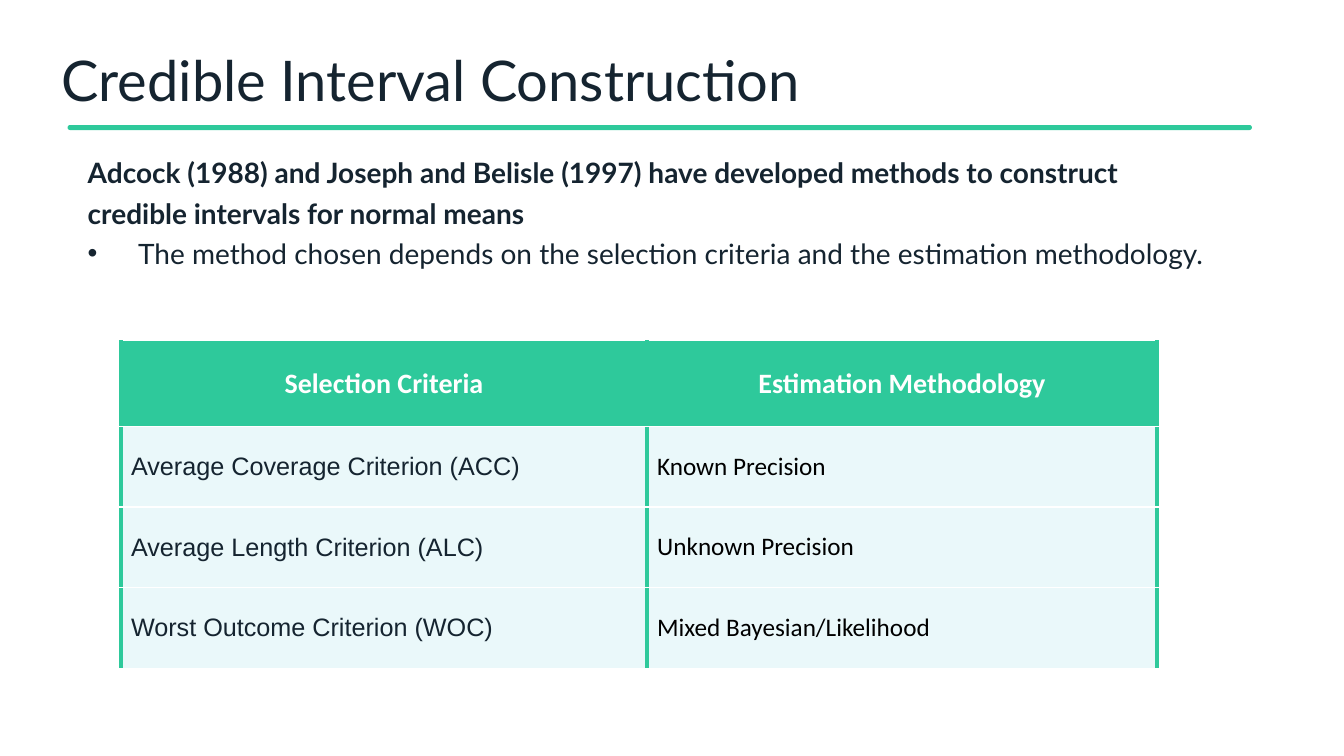
from dataclasses import dataclass

from lxml.etree import SubElement
from pptx import Presentation
from pptx.dml.color import RGBColor
from pptx.enum.shapes import MSO_SHAPE as Preset
from pptx.enum.text import MSO_ANCHOR as Anchor, PP_ALIGN as Align
from pptx.oxml import parse_xml
from pptx.oxml.ns import nsdecls, qn
from pptx.util import Pt

NAVY = RGBColor(0x15, 0x24, 0x30)
GREEN = RGBColor(0x2E, 0xC9, 0x9B)
PALE = RGBColor(0xD6, 0xF2, 0xF6)
WHITE = RGBColor(0xFF, 0xFF, 0xFF)
BLACK = RGBColor(0x00, 0x00, 0x00)


@dataclass(frozen=True)
class TextStyle:
    font: str
    size: float
    color: RGBColor
    bold: bool = False


@dataclass(frozen=True)
class CellStyle:
    text: TextStyle
    fill: RGBColor
    align: Align = Align.LEFT
    opacity: int = 100


TITLE = TextStyle("Lato", 40, NAVY)
LEAD = TextStyle("Lato", 20, NAVY, bold=True)
BULLET = TextStyle("Lato", 20, NAVY)
HEADER = CellStyle(TextStyle("Calibri", 20, WHITE, bold=True), GREEN, Align.CENTER)
CRITERION = CellStyle(TextStyle("Arial", 18, NAVY), PALE, opacity=49)
METHOD = CellStyle(TextStyle("Calibri", 18, BLACK), PALE, opacity=49)

COLUMN_WIDTHS = (375.84, 364.32)
ROW_HEIGHTS = (61.2, 57.6, 57.6, 57.6)
ROWS = (
    ("Selection Criteria", "Estimation Methodology"),
    ("Average Coverage Criterion (ACC)", "Known Precision"),
    ("Average Length Criterion (ALC)", "Unknown Precision"),
    ("Worst Outcome Criterion (WOC)", "Mixed Bayesian/Likelihood"),
)
# Cell edges in the order the file format asks for
BORDERS = (("lnL", GREEN, 3), ("lnR", GREEN, 3), ("lnT", WHITE, 1), ("lnB", WHITE, 1))


def add_span(para, text: str, style: TextStyle) -> None:
    span = para.add_run()
    span.text = text
    span.font.name = style.font
    span.font.size = Pt(style.size)
    span.font.bold = style.bold
    span.font.color.rgb = style.color


def add_frame(page, left: float, top: float, width: float, height: float,
              inset: float, anchor: Anchor):
    box = page.shapes.add_textbox(Pt(left), Pt(top), Pt(width), Pt(height))
    frame = box.text_frame
    frame.word_wrap = True
    frame.vertical_anchor = anchor
    frame.margin_left = frame.margin_right = Pt(inset)
    frame.margin_top = frame.margin_bottom = Pt(inset)
    return frame


def add_bullet(para, indent: float) -> None:
    properties = para._p.get_or_add_pPr()
    properties.set("marL", str(Pt(indent)))
    properties.set("indent", str(-Pt(indent)))
    SubElement(properties, qn("a:buFont")).set("typeface", "Arial")
    SubElement(properties, qn("a:buChar")).set("char", "•")


def fill_cell(cell, text: str, style: CellStyle) -> None:
    cell.vertical_anchor = Anchor.MIDDLE
    cell.margin_left = cell.margin_right = Pt(7.2)
    cell.margin_top = cell.margin_bottom = Pt(7.2)
    para = cell.text_frame.paragraphs[0]
    para.alignment = style.align
    add_span(para, text, style.text)

    cell.fill.solid()
    cell.fill.fore_color.rgb = style.fill
    properties = cell._tc.get_or_add_tcPr()
    if style.opacity < 100:
        color = properties.find(".//" + qn("a:srgbClr"))
        SubElement(color, qn("a:alpha")).set("val", str(style.opacity * 1000))
    for position, (edge, color, width) in enumerate(BORDERS):
        properties.insert(position, parse_xml(
            f'<a:{edge} {nsdecls("a")} w="{Pt(width)}"><a:solidFill>'
            f'<a:srgbClr val="{color}"/></a:solidFill></a:{edge}>'))


def add_criteria_table(page, left: float, top: float) -> None:
    table = page.shapes.add_table(
        len(ROWS), len(COLUMN_WIDTHS), Pt(left), Pt(top),
        Pt(sum(COLUMN_WIDTHS)), Pt(sum(ROW_HEIGHTS))).table
    table.horz_banding = False
    for column, width in zip(table.columns, COLUMN_WIDTHS):
        column.width = Pt(width)
    for index, (row, height, texts) in enumerate(zip(table.rows, ROW_HEIGHTS, ROWS)):
        row.height = Pt(height)
        styles = (CRITERION, METHOD) if index else (HEADER, HEADER)
        for cell, text, style in zip(row.cells, texts, styles):
            fill_cell(cell, text, style)


def main() -> None:
    deck = Presentation()
    deck.slide_width, deck.slide_height = Pt(960), Pt(540)
    page = deck.slides.add_slide(deck.slide_layouts[6])

    # Rule under the title
    rule = page.shapes.add_shape(
        Preset.ROUNDED_RECTANGLE, Pt(48.24), Pt(89.28), Pt(846), Pt(3.6))
    rule.adjustments[0] = 0.5
    rule.shadow.inherit = False
    rule.fill.solid()
    rule.fill.fore_color.rgb = GREEN
    rule.line.fill.background()

    # Title
    frame = add_frame(page, 41.76, 27.36, 875.52, 56.16, 2.16, Anchor.BOTTOM)
    para = frame.paragraphs[0]
    para.line_spacing = 0.9
    add_span(para, "Credible Interval Construction", TITLE)

    # Lead sentence and bullet
    frame = add_frame(page, 62.64, 106.56, 812.16, 113.04, 0, Anchor.TOP)
    lead, point = frame.paragraphs[0], frame.add_paragraph()
    lead.line_spacing = point.line_spacing = 1.2
    add_span(lead, "Adcock (1988) and Joseph and Belisle (1997) have developed methods "
                   "to construct credible intervals for normal means", LEAD)
    add_bullet(point, 36)
    add_span(point, "The method chosen depends on the selection criteria and the "
                    "estimation methodology.", BULLET)

    # Criteria and methodology table
    add_criteria_table(page, 86.4, 243.36)

    deck.save("out.pptx")


if __name__ == "__main__":
    main()
